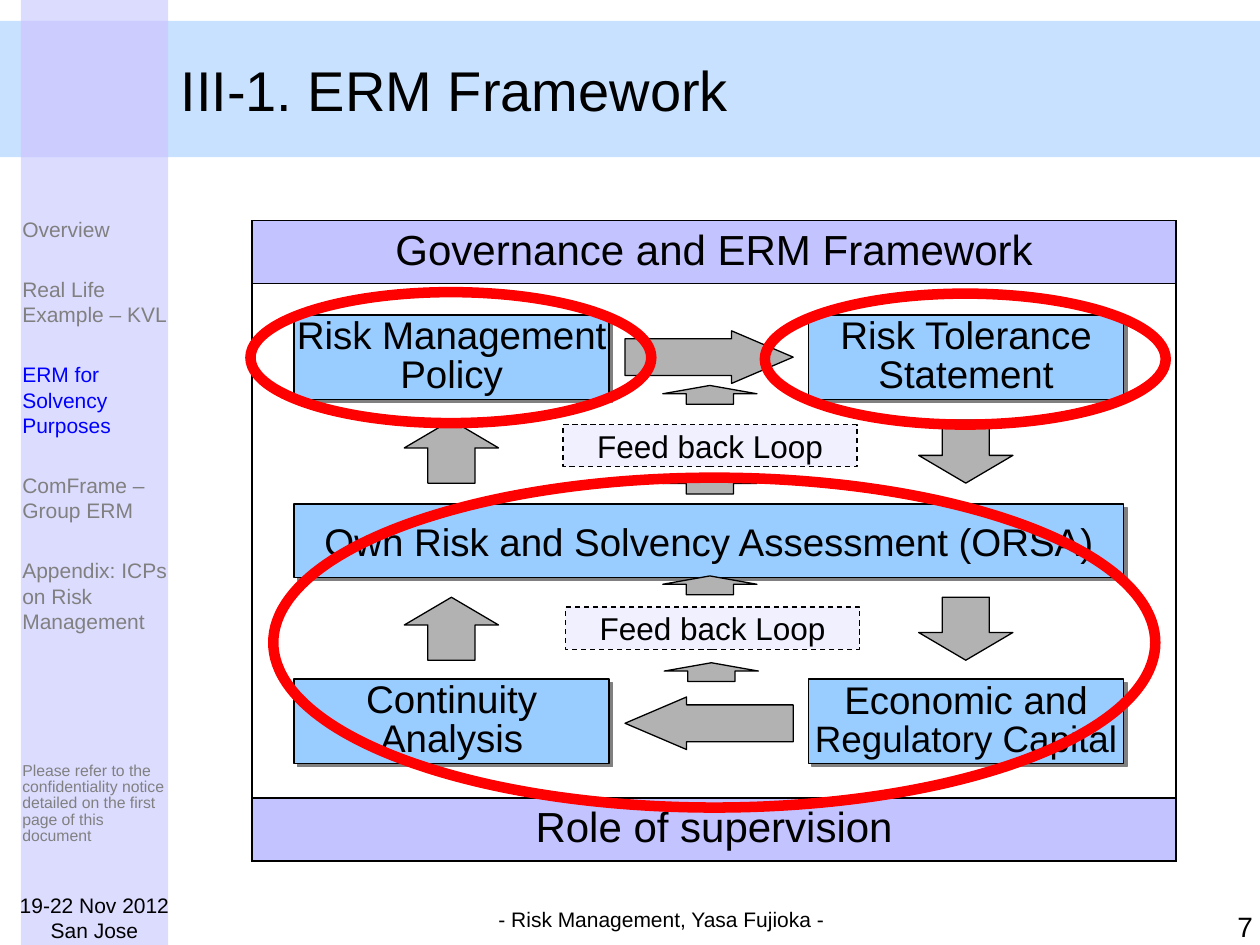
from lxml.etree import SubElement
from pptx import Presentation
from pptx.dml.color import RGBColor as Rgb
from pptx.enum.dml import MSO_LINE as Dash
from pptx.enum.shapes import MSO_SHAPE as Kind
from pptx.enum.text import MSO_ANCHOR as Anchor, MSO_AUTO_SIZE as Fit, PP_ALIGN as Align
from pptx.oxml import parse_xml
from pptx.oxml.ns import nsdecls, qn
from pptx.util import Cm, Pt

COLORS = {
    "text": "000000", "muted": "808080", "current": "0000FF",
    "sidebar": "DCDCFF", "band": "C8E1FF", "corner": "CCCCFF",
    "header": "C3C3FF", "step": "99CCFF", "arrow": "B2B2B2",
    "loop": "F0F0FF", "highlight": "FF0000",
}
CENTER = {"alignment": Align.CENTER}
TIGHT = {"alignment": Align.CENTER, "line_spacing": 0.85}
NO_SIDES = (0, 0.13)
NORMAL = (0.25, 0.13)


def color(name):
    return Rgb.from_string(COLORS[name])


class SlideBuilder:
    font = "Arial"
    thin = 0.75

    def __init__(self, slide):
        self.slide = slide
        self.shapes = slide.shapes

    def place(self, shape, area):
        for name, value in zip(("left", "top", "width", "height"), area):
            setattr(shape, name, Cm(value))

    def fill_frame(self, frame, paragraphs, size, tone="text", layout=None,
                   margins=NORMAL, anchor=Anchor.TOP, wrap=True):
        side, edge = (Cm(value) for value in margins)
        settings = {
            "auto_size": Fit.NONE, "word_wrap": wrap, "vertical_anchor": anchor,
            "margin_left": side, "margin_right": side,
            "margin_top": edge, "margin_bottom": edge,
        }
        for name, value in settings.items():
            setattr(frame, name, value)
        for index, content in enumerate(paragraphs):
            para = frame.add_paragraph() if index else frame.paragraphs[0]
            self.fill_paragraph(para, content, size, tone, layout)

    def fill_paragraph(self, para, content, size, tone, layout=None):
        for name, value in (layout or {}).items():
            setattr(para, name, value)
        runs = [(content, size)] if isinstance(content, str) else content
        for text, run_size in runs:
            span = para.add_run()
            span.text = text
            for name, value in {"name": self.font, "size": Pt(run_size)}.items():
                setattr(span.font, name, value)
            span.font.color.rgb = color(tone)

    def title(self, text, area):
        box = self.shapes.title
        self.shapes.element.append(box.element)
        self.place(box, area)
        self.fill_frame(box.text_frame, [text], 32, layout={"alignment": Align.LEFT},
                        anchor=Anchor.MIDDLE)

    def agenda(self, topics, current, area):
        box = self.slide.placeholders[1]
        self.shapes.element.append(box.element)
        self.place(box, area)
        frame = box.text_frame
        self.fill_frame(frame, [], 12, margins=NO_SIDES)
        for index, topic in enumerate(topics):
            para = frame.add_paragraph() if index else frame.paragraphs[0]
            props = para._p.get_or_add_pPr()
            props.set("marL", "0")
            props.set("indent", "0")
            SubElement(props, qn("a:buNone"))
            tone = "current" if topic == current else "muted"
            layout = {"space_before": Pt(20 if index else 0)}
            self.fill_paragraph(para, topic, 12, tone, layout)

    def text(self, paragraphs, area, size, **style):
        box = self.shapes.add_textbox(*map(Cm, area))
        self.fill_frame(box.text_frame, paragraphs, size, **style)

    def shape(self, kind, area, fill=None, line=None, width=thin):
        shape = self.shapes.add_shape(kind, *map(Cm, area))
        shape.shadow.inherit = False
        if fill:
            shape.fill.solid()
            shape.fill.fore_color.rgb = color(fill)
        else:
            shape.fill.background()
        if line:
            shape.line.color.rgb = color(line)
            shape.line.width = Pt(width)
        else:
            shape.line.fill.background()
        return shape

    def step(self, content, area, layout=TIGHT, margins=NORMAL):
        box = self.shape(Kind.RECTANGLE, area, "step", "text")
        effects = box.element.spPr.find(qn("a:effectLst"))
        effects.append(parse_xml(
            f'<a:outerShdw {nsdecls("a")} dist="35921" dir="2700000" algn="ctr" '
            f'rotWithShape="0"><a:srgbClr val="{COLORS["muted"]}"/></a:outerShdw>'))
        self.fill_frame(box.text_frame, [content], 22, layout=layout,
                        margins=margins, anchor=Anchor.MIDDLE)

    def arrow(self, kind, area, adjustments, turned=False):
        arrow = self.shape(kind, area, "arrow", "text")
        for index, value in enumerate(adjustments):
            arrow.adjustments[index] = value
        if turned:
            arrow.rotation = 180

    def loop(self, area):
        box = self.shape(Kind.RECTANGLE, area, "loop", "text")
        box.line.dash_style = Dash.DASH
        self.fill_frame(box.text_frame, ["Feed back Loop"], 18, layout=CENTER,
                        anchor=Anchor.MIDDLE, wrap=False)

    def table(self, rows, area):
        table = self.shapes.add_table(len(rows), 1, *map(Cm, area)).table
        for name in ("first_row", "horz_banding"):
            setattr(table, name, False)
        for index, (text, height) in enumerate(rows):
            table.rows[index].height = Cm(height)
            cell = table.cell(index, 0)
            props = cell._tc.get_or_add_tcPr()
            for edge in ("lnL", "lnR", "lnT", "lnB"):
                props.append(parse_xml(
                    f'<a:{edge} {nsdecls("a")} w="12700"><a:solidFill>'
                    f'<a:srgbClr val="{COLORS["text"]}"/></a:solidFill></a:{edge}>'))
            if text:
                cell.fill.solid()
                cell.fill.fore_color.rgb = color("header")
                self.fill_paragraph(cell.text_frame.paragraphs[0], text, 24, "text", CENTER)
            else:
                cell.fill.background()


def main():
    deck = Presentation()
    deck.slide_width, deck.slide_height = Cm(25.4), Cm(19.05)
    page = SlideBuilder(deck.slides.add_slide(deck.slide_layouts[1]))

    page.shape(Kind.RECTANGLE, (0.42, 0, 2.97, 19.05), "sidebar")
    page.shape(Kind.RECTANGLE, (0, 0.42, 25.4, 2.75), "band")
    page.shape(Kind.RECTANGLE, (0.42, 0.42, 2.97, 2.75), "corner")
    page.text(["19-22 Nov 2012", "San Jose"], (0.21, 17.99, 3.39, 1.02), 12,
              layout=CENTER, margins=(0, 0))
    page.text(["Please refer to the confidentiality notice detailed on the first "
               "page of this document"], (0.45, 15.28, 2.97, 1.86), 9, tone="muted",
              layout={"line_spacing": 0.85}, margins=NO_SIDES, anchor=Anchor.MIDDLE)
    page.text(["- Risk Management, Yasa Fujioka -"], (6.56, 18.14, 13.55, 0.77), 12,
              layout=CENTER)
    page.text(["7"], (24.2, 18.34, 1.06, 0.68), 16,
              layout={"alignment": Align.RIGHT}, margins=(0, 0))
    page.title("III-1. ERM Framework", (3.39, 0.42, 21.59, 2.75))
    page.agenda(["Overview", "Real Life Example – KVL", "ERM for Solvency Purposes",
                 "ComFrame – Group ERM", "Appendix: ICPs on Risk Management"],
                "ERM for Solvency Purposes", (0.45, 4.23, 2.93, 9.53))

    page.table([("Governance and ERM Framework", 1.27), ("", 10.37),
                ("Role of supervision", 1.27)], (5.08, 4.45, 18.63, 12.91))

    left, right, upper, lower = 5.93, 16.3, 6.35, 13.69
    size = (6.35, 1.7)
    page.step("Own Risk and Solvency Assessment (ORSA)", (left, 10.16, 16.72, 1.48), CENTER)
    page.step("Risk Management Policy", (left, upper, *size), margins=NO_SIDES)
    page.step("Risk Tolerance Statement", (right, upper, *size))
    page.step("Continuity Analysis", (left, lower, *size))
    page.step([("Economic and ", 22), ("Regulatory Capital", 21)],
              (right, lower, *size), margins=NO_SIDES)

    vertical, horizontal = (0.5, 0.44), (0.7, 1.17)
    for x, turned in ((18.52, False), (8.15, True)):
        for y in (8.47, 12.04):
            page.arrow(Kind.DOWN_ARROW, (x, y, 1.9, 1.27), vertical, turned)
    for y, turned in ((6.67, False), (14.05, True)):
        page.arrow(Kind.RIGHT_ARROW, (12.6, y, 3.39, 1.06), horizontal, turned)
    for x, y in ((11.35, 8.56), (11.4, 12.24)):
        page.loop((x, y, 5.93, 0.85))
    for x, y in ((13.39, 13.36), (13.36, 11.61), (13.36, 9.58), (13.36, 7.77)):
        page.arrow(Kind.DOWN_ARROW, (x, y, 1.9, 0.38), vertical, True)
    for area in ((5.05, 5.89, 8.08, 2.64), (15.42, 5.92, 8.08, 2.64),
                 (5.51, 9.63, 17.78, 6.65)):
        page.shape(Kind.OVAL, area, line="highlight", width=6)

    deck.save("out.pptx")


if __name__ == "__main__":
    main()
